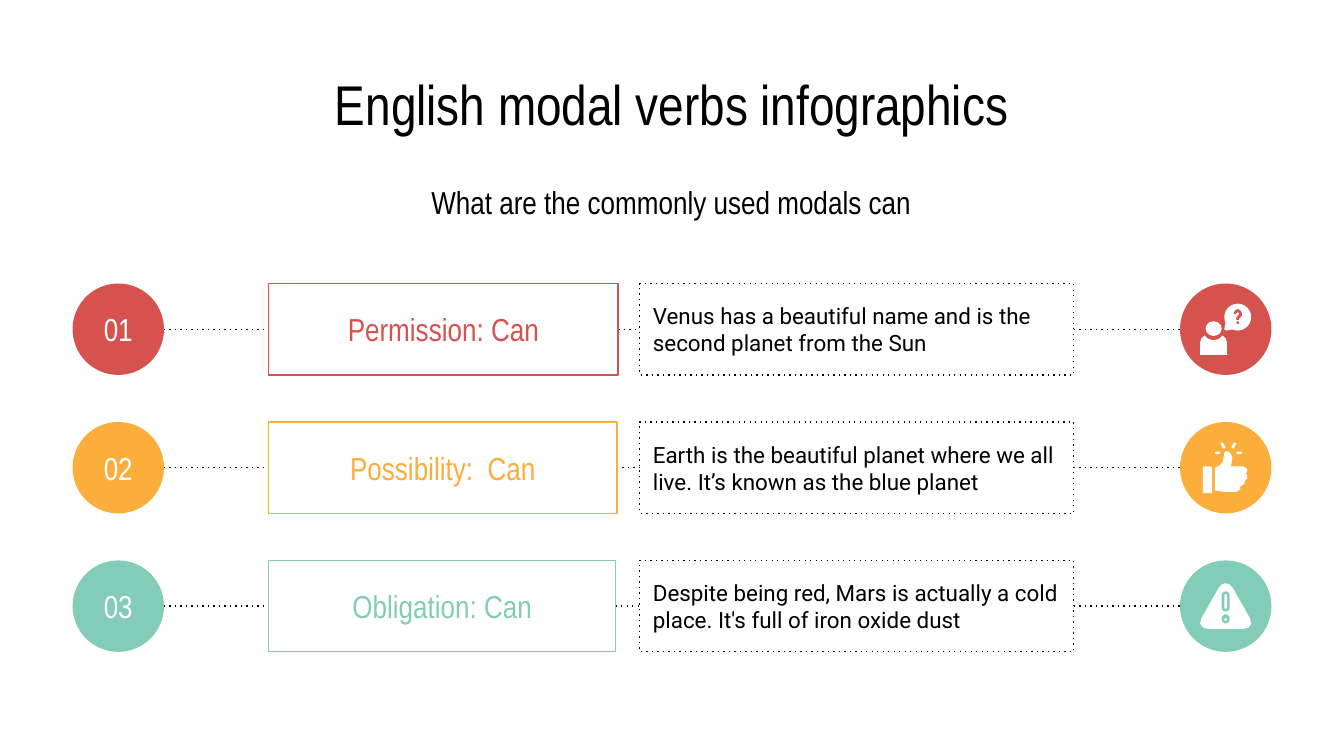
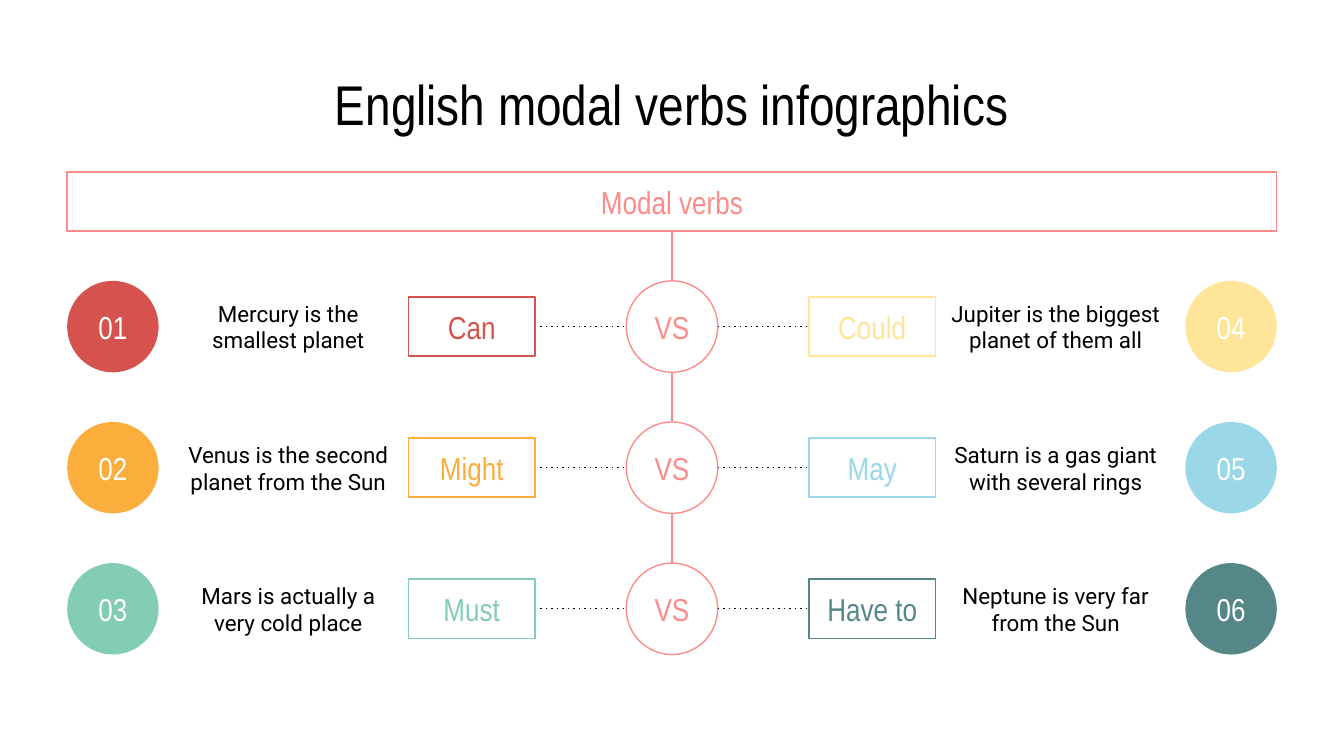
from pptx import Presentation
from pptx.dml.color import RGBColor
from pptx.enum.shapes import MSO_CONNECTOR, MSO_SHAPE
from pptx.enum.text import MSO_ANCHOR, PP_ALIGN
from pptx.oxml.ns import qn
from pptx.util import Inches, Pt
from lxml import etree

RECT, ROUND, OVAL = MSO_SHAPE.RECTANGLE, MSO_SHAPE.ROUNDED_RECTANGLE, MSO_SHAPE.OVAL
SHOULDERS = MSO_SHAPE.ROUND_2_SAME_RECTANGLE
STRAIGHT = MSO_CONNECTOR.STRAIGHT
MIDDLE, LEFT, CENTER = MSO_ANCHOR.MIDDLE, PP_ALIGN.LEFT, PP_ALIGN.CENTER

BLACK, WHITE, PINK = "000000", "FFFFFF", "FD8C89"
RED, ORANGE, GREEN = "D5524E", "FBAE3C", "83CDB7"
YELLOW, BLUE, TEAL = "FFE599", "9AD8E7", "558688"
HEADING, BODY = "Arial Narrow", "Roboto"
DISC, BAR = 0.68, 0.44

# Content
TITLE = "English modal verbs infographics"
SUBTITLE = "What are the commonly used modals can"
USES = [
    ("01", "Permission: Can", RED,
     "Venus has a beautiful name and is the second planet from the Sun"),
    ("02", "Possibility:  Can", ORANGE,
     "Earth is the beautiful planet where we all live. It’s known as the blue planet"),
    ("03", "Obligation: Can", GREEN,
     "Despite being red, Mars is actually a cold place. It's full of iron oxide dust"),
]
BANNER = "Modal verbs"
VERSUS = "VS"
PAIRS = [
    (("01", "Can", RED, "Mercury is the smallest planet"),
     ("04", "Could", YELLOW, "Jupiter is the biggest planet of them all")),
    (("02", "Might", ORANGE, "Venus is the second planet from the Sun"),
     ("05", "May", BLUE, "Saturn is a gas giant with several rings")),
    (("03", "Must", GREEN, "Mars is actually a very cold place"),
     ("06", "Have to", TEAL, "Neptune is very far from the Sun")),
]

# Icon outlines
BUBBLE_TAIL = [(9.12, 2.39), (9.11, 2.45), (9.12, 2.46), (9.18, 2.45)]
QUESTION_HOOK = [(9.18, 2.33), (9.19, 2.31), (9.21, 2.3), (9.23, 2.31), (9.24, 2.33),
                 (9.24, 2.35), (9.22, 2.37), (9.22, 2.38), (9.2, 2.38), (9.2, 2.36),
                 (9.22, 2.34), (9.22, 2.33), (9.21, 2.32), (9.2, 2.33), (9.19, 2.34)]
THUMB = [(9.12, 3.36), (9.14, 3.36), (9.16, 3.38), (9.17, 3.41), (9.16, 3.47),
         (9.25, 3.47), (9.28, 3.49), (9.28, 3.51), (9.27, 3.52), (9.28, 3.54),
         (9.28, 3.56), (9.26, 3.58), (9.26, 3.6), (9.23, 3.62), (9.23, 3.64),
         (9.2, 3.66), (9.11, 3.66), (9.04, 3.65), (9.04, 3.48), (9.08, 3.46),
         (9.1, 3.43), (9.11, 3.37)]
WARNING_HALF = [(9.12, 4.34), (9.15, 4.35), (9.17, 4.37), (9.3, 4.6),
                (9.31, 4.64), (9.29, 4.67), (9.25, 4.68)]
WARNING = WARNING_HALF + [(round(18.24 - x, 2), y) for x, y in reversed(WARNING_HALF)]


def color(hex_string):
    return RGBColor.from_string(hex_string)


def write(shape, text, ink, font=HEADING, size=17, align=CENTER):
    frame = shape.text_frame
    frame.word_wrap = True
    frame.vertical_anchor = MIDDLE
    frame.margin_left = frame.margin_right = Inches(0.1)
    frame.margin_top = frame.margin_bottom = Inches(0.1)
    frame.text = text
    paragraph = frame.paragraphs[0]
    paragraph.alignment = align
    style = paragraph.runs[0].font
    style.name, style.size = font, Pt(size)
    style.color.rgb = color(ink)


def stroke(part, ink, dotted):
    part.line.color.rgb = color(ink)
    part.line.width = Pt(0.75)
    if dotted:
        outline = part._element.spPr.find(qn("a:ln"))
        etree.SubElement(outline, qn("a:prstDash")).set("val", "dot")


def paint(shape, fill=None, line=None, dotted=False):
    shape.shadow.inherit = False
    if fill:
        shape.fill.solid()
        shape.fill.fore_color.rgb = color(fill)
    else:
        shape.fill.background()
    if line:
        stroke(shape, line, dotted)
    else:
        shape.line.fill.background()


def add_shape(slide, kind, box, fill=None, line=None, dotted=False):
    shape = slide.shapes.add_shape(kind, *map(Inches, box))
    paint(shape, fill, line, dotted)
    return shape


def add_text(slide, box, text, **style):
    write(slide.shapes.add_textbox(*map(Inches, box)), text, BLACK, **style)


def add_line(slide, x1, y1, x2, y2, ink=BLACK, dotted=True):
    line = slide.shapes.add_connector(STRAIGHT, *map(Inches, (x1, y1, x2, y2)))
    stroke(line, ink, dotted)
    etree.SubElement(line._element.spPr, qn("a:effectLst"))


def add_outline(slide, points, fill):
    start, *rest = [(Inches(x), Inches(y)) for x, y in points]
    builder = slide.shapes.build_freeform(*start)
    builder.add_line_segments(rest, close=True)
    paint(builder.convert_to_shape(), fill)


def add_pill(slide, box, fill, turn=0):
    pill = add_shape(slide, ROUND, box, fill)
    pill.adjustments[0] = 0.5
    pill.rotation = turn


def add_circle(slide, x, y, fill=None, line=None):
    return add_shape(slide, OVAL, (x, y, DISC, DISC), fill, line)


def new_slide(deck):
    slide = deck.slides.add_slide(deck.slide_layouts[6])
    slide.background.fill.solid()
    slide.background.fill.fore_color.rgb = color(WHITE)
    add_text(slide, (0.5, 0.45, 9, 0.63), TITLE, size=30)
    return slide


# Icons
def question_icon(slide, back):
    add_shape(slide, SHOULDERS, (8.93, 2.49, 0.2, 0.15), WHITE).adjustments[0] = 0.4
    add_shape(slide, OVAL, (8.95, 2.37, 0.16, 0.16), back)
    add_shape(slide, OVAL, (8.97, 2.39, 0.12, 0.11), WHITE)
    add_shape(slide, OVAL, (9.11, 2.26, 0.2, 0.2), WHITE)
    add_outline(slide, BUBBLE_TAIL, WHITE)
    add_outline(slide, QUESTION_HOOK, back)
    add_shape(slide, OVAL, (9.2, 2.39, 0.02, 0.02), back)


def thumb_icon(slide, back):
    add_outline(slide, THUMB, WHITE)
    add_shape(slide, ROUND, (8.95, 3.47, 0.07, 0.2), WHITE)
    for x in (9.04, 9.2):
        add_pill(slide, (x, 3.36, 0.04, 0.02), WHITE)
    for x, turn in ((9.09, -30), (9.17, 30)):
        add_pill(slide, (x, 3.29, 0.02, 0.05), WHITE, turn)


def warning_icon(slide, back):
    add_outline(slide, WARNING, WHITE)
    add_pill(slide, (9.09, 4.4, 0.06, 0.15), back)
    add_pill(slide, (9.11, 4.42, 0.02, 0.11), WHITE)
    add_shape(slide, OVAL, (9.09, 4.57, 0.06, 0.07), back)
    add_shape(slide, OVAL, (9.11, 4.6, 0.02, 0.02), WHITE)


ICONS = [question_icon, thumb_icon, warning_icon]


def uses_slide(deck):
    slide = new_slide(deck)
    add_text(slide, (2.08, 1.28, 5.83, BAR), SUBTITLE)
    number_x, label_x, note_x, icon_x = 0.54, 2, 4.76, 8.78
    note_width = 3.23
    for row, (number, label, accent, note) in enumerate(USES):
        top = 2.11 + 1.03 * row
        middle = top + DISC / 2
        label_width = 2.6 - 0.01 * row
        # Dotted links between the parts of the row
        for start, end in ((number_x + DISC, label_x),
                           (label_x + label_width, note_x),
                           (note_x + note_width, icon_x)):
            add_line(slide, start, middle, end, middle)
        write(add_circle(slide, number_x, top, accent), number, WHITE)
        label_box = add_shape(slide, RECT, (label_x, top, label_width, DISC), line=accent)
        write(label_box, label, accent)
        note_box = add_shape(slide, RECT, (note_x, top, note_width, DISC),
                             line=BLACK, dotted=True)
        write(note_box, note, BLACK, BODY, 12, LEFT)
        add_circle(slide, icon_x, top, accent)
        ICONS[row](slide, accent)


def pairs_slide(deck):
    slide = new_slide(deck)
    banner_top = 1.28
    banner = add_shape(slide, RECT, (0.5, banner_top, 9, BAR), line=PINK)
    write(banner, BANNER, PINK)
    verb_width, note_width = 0.94, 1.79
    # Left edges of number, note and verb; then both ends of the dotted link
    sides = [(0.5, 1.25, 3.04, 3.98, 4.66), (8.82, 6.96, 6.02, 5.34, 6.02)]
    above = banner_top + BAR
    for row, pair in enumerate(PAIRS):
        top = 2.09 + 1.05 * row
        middle = top + DISC / 2
        add_line(slide, 5, above, 5, top, PINK, dotted=False)
        above = top + DISC
        write(add_circle(slide, 5 - DISC / 2, top, line=PINK), VERSUS, PINK)
        bar_top = middle - BAR / 2
        for (number, verb, accent, note), side in zip(pair, sides):
            number_x, note_x, verb_x, link_start, link_end = side
            add_line(slide, link_start, middle, link_end, middle)
            verb_box = add_shape(slide, RECT, (verb_x, bar_top, verb_width, BAR), line=accent)
            write(verb_box, verb, accent)
            add_text(slide, (note_x, bar_top, note_width, BAR), note, font=BODY, size=12)
            write(add_circle(slide, number_x, top, accent), number, WHITE)


def main():
    deck = Presentation()
    # Widescreen, 16 to 9
    deck.slide_width = Inches(10)
    deck.slide_height = Inches(10) * 9 // 16
    uses_slide(deck)
    pairs_slide(deck)
    deck.save("out.pptx")


if __name__ == "__main__":
    main()
